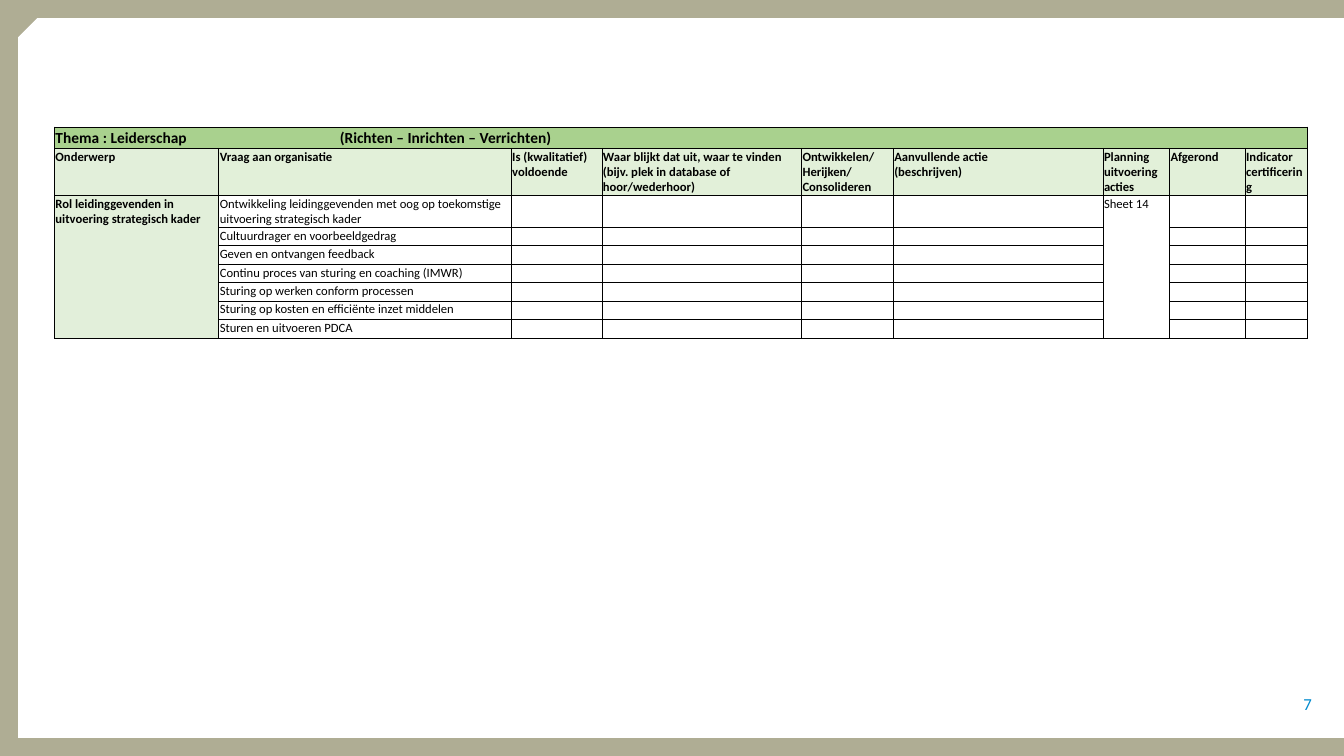
from dataclasses import dataclass

import lxml.etree
import pptx
import pptx.dml.color
import pptx.enum.shapes
import pptx.enum.text
import pptx.oxml.ns
import pptx.util

# Slide grid: 1333 columns by 750 rows
GRID_COLUMNS, GRID_ROWS = 1333, 750
SLIDE_WIDTH, SLIDE_HEIGHT = pptx.util.Inches(13.33), pptx.util.Inches(7.5)
FONT = "Calibri"
FRAME, PAGE, BLACK, NUMBER_BLUE = "AFAD94", "FFFFFF", "000000", "008ACE"
THEME_GREEN, TOPIC_GREEN, HEADER_GREEN = "A9D18E", "E2EFDA", "E2F0D9"


@dataclass
class Entry:
    """Cell content: \\n starts a paragraph, \\v a line break."""
    text: str = ""
    fill: str = ""
    bold: bool = False
    size: int = 9
    rows: int = 1
    columns: int = 1


def across(columns: float) -> int:
    return round(SLIDE_WIDTH * columns / GRID_COLUMNS)


def down(rows: float) -> int:
    return round(SLIDE_HEIGHT * rows / GRID_ROWS)


def colour(value: str) -> pptx.dml.color.RGBColor:
    return pptx.dml.color.RGBColor.from_string(value)


def add_element(parent, tag: str, **attributes: str):
    return lxml.etree.SubElement(parent, pptx.oxml.ns.qn(tag), attributes)


def add_run(paragraph, text: str, size: int, shade: str, bold: bool = False) -> None:
    run = paragraph.add_run()
    run.text = text
    run.font.name, run.font.size, run.font.bold = FONT, pptx.util.Pt(size), bold
    run.font.color.rgb = colour(shade)


def add_borders(cell) -> None:
    properties = cell._tc.get_or_add_tcPr()
    for side in ("a:lnL", "a:lnR", "a:lnT", "a:lnB"):
        line = add_element(properties, side, w=str(pptx.util.Pt(0.5)))
        add_element(add_element(line, "a:solidFill"), "a:srgbClr", val=BLACK)


def style_cell(cell, fill: str) -> None:
    cell.margin_left = cell.margin_right = cell.margin_top = across(1)
    cell.margin_bottom = 0
    add_borders(cell)
    if fill:
        cell.fill.solid()
        cell.fill.fore_color.rgb = colour(fill)
    else:
        cell.fill.background()


def write_cell(cell, entry: Entry) -> None:
    frame = cell.text_frame
    for index, text in enumerate(entry.text.split("\n")):
        paragraph = frame.add_paragraph() if index else frame.paragraphs[0]
        if not text:
            add_element(paragraph._p, "a:endParaRPr", sz=str(entry.size * 100))
            continue
        if "\t" in text:
            tabs = add_element(paragraph._p.get_or_add_pPr(), "a:tabLst")
            add_element(tabs, "a:tab", pos=str(across(282)), algn="l")
        for number, line in enumerate(text.split("\v")):
            if number:
                paragraph.add_line_break()
            add_run(paragraph, line, entry.size, BLACK, entry.bold)


# Content of the table
theme = Entry("Thema : Leiderschap\t(Richten – Inrichten – Verrichten)",
              THEME_GREEN, True, 11, columns=9)
headings = [
    "Onderwerp",
    "Vraag aan organisatie",
    "Is (kwalitatief) voldoende",
    "Waar blijkt dat uit, waar te vinden (bijv. plek in database of hoor/wederhoor)",
    "Ontwikkelen/\vHerijken/\vConsolideren",
    "Aanvullende actie\v(beschrijven)",
    "Planning uitvoering\nacties",
    "Afgerond",
    "Indicator certificering",
]
questions = [
    "Ontwikkeling leidinggevenden met oog op toekomstige uitvoering strategisch kader",
    "Cultuurdrager en voorbeeldgedrag",
    "Geven en ontvangen feedback",
    "Continu proces van sturing en coaching (IMWR)",
    "Sturing op werken conform processen",
    "Sturing op kosten en efficiënte inzet middelen",
    "Sturen en uitvoeren PDCA",
]
column_widths = [163, 290, 90, 198, 91, 208, 66, 75, 62]
row_heights = [21, 46, 32] + [18.3] * (len(questions) - 1)

entries = {(0, 0): theme}
for column, heading in enumerate(headings):
    entries[1, column] = Entry(heading, HEADER_GREEN if column else TOPIC_GREEN, True)
for row, question in enumerate(questions, start=2):
    entries[row, 1] = Entry(question)
entries[2, 0] = Entry("Rol leidinggevenden in uitvoering strategisch kader",
                      TOPIC_GREEN, True, rows=len(questions))
entries[2, 6] = Entry("Sheet 14", rows=len(questions))

presentation = pptx.Presentation()
presentation.slide_width, presentation.slide_height = SLIDE_WIDTH, SLIDE_HEIGHT
slide = presentation.slides.add_slide(presentation.slide_layouts[6])
slide.background.fill.solid()
slide.background.fill.fore_color.rgb = colour(FRAME)

# White page with a cut corner
page_corners = [(37, 18), (1333, 18), (1333, 732), (18, 732)]
outline = slide.shapes.build_freeform(across(18), down(37))
outline.add_line_segments([(across(x), down(y)) for x, y in page_corners], close=True)
page = outline.convert_to_shape()
page.shadow.inherit = False
page.fill.solid()
page.fill.fore_color.rgb = colour(PAGE)
page.line.fill.background()

# Slide number
badge = slide.shapes.add_shape(pptx.enum.shapes.MSO_SHAPE.OVAL,
                               across(1277), down(678), across(40), down(40))
badge.shadow.inherit = False
badge.fill.background()
badge.line.fill.background()
badge_frame = badge.text_frame
badge_frame.margin_left = badge_frame.margin_right = 0
badge_frame.margin_top = badge_frame.margin_bottom = 0
badge_frame.word_wrap = False
badge_frame.vertical_anchor = pptx.enum.text.MSO_ANCHOR.MIDDLE
badge_frame.paragraphs[0].alignment = pptx.enum.text.PP_ALIGN.CENTER
add_run(badge_frame.paragraphs[0], "7", 12, NUMBER_BLUE)

# Leadership table
leadership = slide.shapes.add_table(
    len(row_heights), len(column_widths), across(54), down(126),
    across(sum(column_widths)), down(sum(row_heights))).table
leadership.first_row = leadership.horz_banding = False
for column, width in enumerate(column_widths):
    leadership.columns[column].width = across(width)
for row, height in enumerate(row_heights):
    leadership.rows[row].height = down(height)
    for column in range(len(column_widths)):
        entry = entries.get((row, column), Entry())
        cell = leadership.cell(row, column)
        style_cell(cell, entry.fill)
        write_cell(cell, entry)
for (row, column), entry in entries.items():
    if entry.rows * entry.columns > 1:
        leadership.cell(row, column).merge(
            leadership.cell(row + entry.rows - 1, column + entry.columns - 1))
leadership.cell(0, 0).vertical_anchor = pptx.enum.text.MSO_ANCHOR.BOTTOM

presentation.save("out.pptx")
